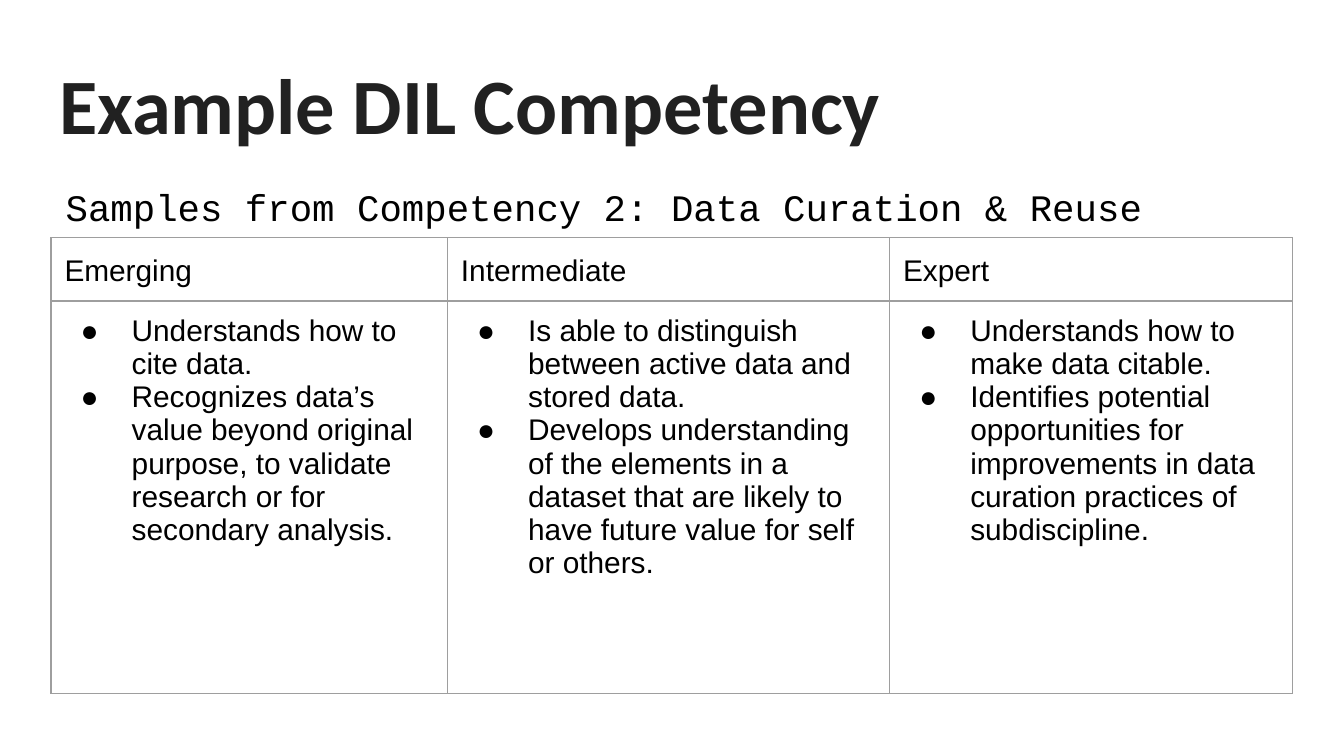
from lxml import etree
from pptx import Presentation
from pptx.dml.color import RGBColor
from pptx.enum.text import MSO_ANCHOR, MSO_AUTO_SIZE, PP_ALIGN
from pptx.oxml.ns import qn
from pptx.util import Pt

TOP, BOTTOM = MSO_ANCHOR.TOP, MSO_ANCHOR.BOTTOM
LEFT = PP_ALIGN.LEFT
NO_AUTOFIT = MSO_AUTO_SIZE.NONE
PX = 9144  # 100 px to the inch
INSET = 10 * PX
BORDER = "9E9E9E"


def style(frame, font, size, color, bold=False):
    for paragraph in frame.paragraphs:
        paragraph.alignment = LEFT
        for run in paragraph.runs:
            run.font.name = font
            run.font.size = Pt(size)
            run.font.bold = bold
            run.font.color.rgb = RGBColor.from_string(color)


def add_borders(cell):
    properties = cell._tc.get_or_add_tcPr()
    for side in ("a:lnL", "a:lnR", "a:lnT", "a:lnB"):
        line = etree.SubElement(properties, qn(side), w=str(Pt(0.75)))
        fill = etree.SubElement(line, qn("a:solidFill"))
        etree.SubElement(fill, qn("a:srgbClr"), val=BORDER)


prs = Presentation()
prs.slide_width = 1000 * PX
prs.slide_height = prs.slide_width * 9 // 16
slide = prs.slides.add_slide(prs.slide_layouts[5])

# Title and subtitle
title = slide.shapes.title
title.left, title.top, title.width, title.height = 34 * PX, 32 * PX, 932 * PX, 88 * PX
title.text_frame.text = "Example DIL Competency"
style(title.text_frame, "Calibri", 42, "212121", bold=True)

subtitle = slide.shapes.add_textbox(39 * PX, 127 * PX, 884 * PX, 70 * PX)
subtitle.text_frame.text = "Samples from Competency 2: Data Curation & Reuse"
style(subtitle.text_frame, "Courier New", 20, "000000")

for frame in (title.text_frame, subtitle.text_frame):
    frame.word_wrap = True
    frame.auto_size = NO_AUTOFIT
    frame.vertical_anchor = TOP
    frame.margin_left = frame.margin_right = INSET
    frame.margin_top = frame.margin_bottom = INSET

# Competency levels, one column each
levels = [
    ("Emerging", 295, [
        "Understands how to cite data.",
        "Recognizes data’s value beyond original purpose, to validate research "
        "or for secondary analysis.",
    ]),
    ("Intermediate", 329, [
        "Is able to distinguish between active data and stored data.",
        "Develops understanding of the elements in a dataset that are likely "
        "to have future value for self or others.",
    ]),
    ("Expert", 300, [
        "Understands how to make data citable.",
        "Identifies potential opportunities for improvements in data curation "
        "practices of subdiscipline.",
    ]),
]
table = slide.shapes.add_table(2, len(levels), 38 * PX, 177 * PX, 924 * PX, 339 * PX).table
table.first_row = table.horz_banding = False
table.rows[0].height, table.rows[1].height = 47 * PX, 292 * PX

for column, (level, width, skills) in enumerate(levels):
    table.columns[column].width = width * PX
    heading, details = table.cell(0, column), table.cell(1, column)
    heading.text_frame.text = level
    details.text_frame.text = "\n".join(skills)

    for paragraph in details.text_frame.paragraphs:
        properties = paragraph._p.get_or_add_pPr()
        properties.set("marL", str(50 * PX))
        properties.set("indent", str(-38 * PX))
        etree.SubElement(properties, qn("a:buSzPts"), val="1600")
        etree.SubElement(properties, qn("a:buFont"), typeface="Arial")
        etree.SubElement(properties, qn("a:buChar"), char="●")

    for cell, anchor in ((heading, BOTTOM), (details, TOP)):
        style(cell.text_frame, "Arial", 16, "000000")
        cell.vertical_anchor = anchor
        cell.margin_left = cell.margin_right = INSET
        cell.margin_top = cell.margin_bottom = INSET
        add_borders(cell)
        cell.fill.background()

prs.save("out.pptx")
